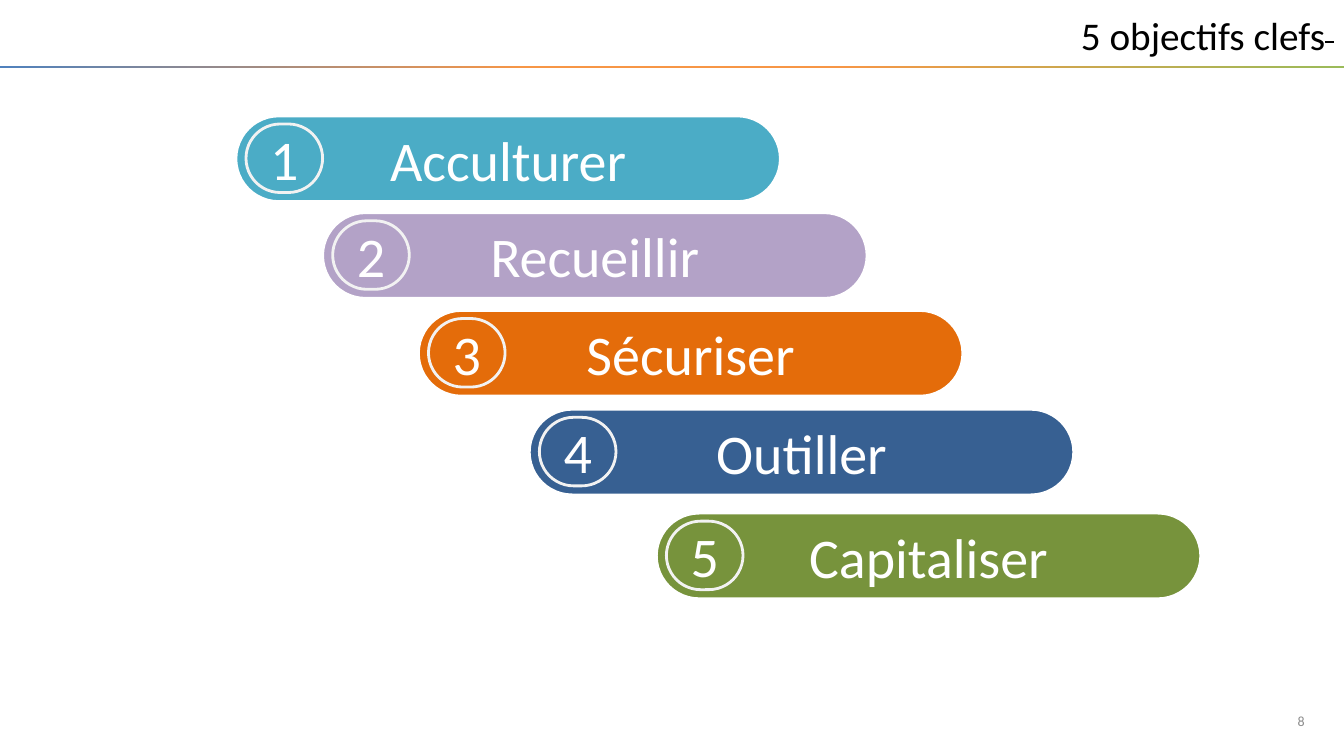
from lxml.etree import SubElement
from pptx import Presentation
from pptx.dml.color import RGBColor
from pptx.enum.shapes import MSO_SHAPE
from pptx.enum.text import MSO_ANCHOR, MSO_AUTO_SIZE, PP_ALIGN
from pptx.oxml.ns import qn
from pptx.util import Inches, Pt

FONT = "Calibri"
COLORS = {
    "black": "000000", "white": "FFFFFF", "ring": "F2F2F2", "gray": "8C8C8C",
    "teal": "4BACC6", "mauve": "B3A2C7", "orange": "E46C0A",
    "navy": "376092", "green": "77933C",
    "blue": "4F81BD", "amber": "F79646", "lime": "9BBB59",
}
GOALS = [
    ("Acculturer", "teal", 2.34, 1.15),
    ("Recueillir", "mauve", 3.2, 2.11),
    ("Sécuriser", "orange", 4.15, 3.08),
    ("Outiller", "navy", 5.25, 4.06),
    ("Capitaliser", "green", 6.51, 5.09),
]


def color(name):
    return RGBColor.from_string(COLORS[name])


def add_run(para, text, size, tint):
    run = para.add_run()
    run.text = text
    run.font.name = FONT
    run.font.size = Pt(size)
    run.font.color.rgb = color(tint)
    return run


def set_frame(frame, align):
    """Centre the text vertically, align it and return its paragraph."""
    frame.word_wrap = True
    frame.auto_size = MSO_AUTO_SIZE.NONE
    frame.vertical_anchor = MSO_ANCHOR.MIDDLE
    para = frame.paragraphs[0]
    para.alignment = align
    return para


def add_title(slide):
    title = slide.shapes.title
    title.left, title.top = Inches(0), Inches(0)
    title.width, title.height = Inches(13.33), Inches(0.69)
    para = set_frame(title.text_frame, PP_ALIGN.RIGHT)
    add_run(para, "5 objectifs clefs", 28, "black")
    space = add_run(para, " ", 28, "black")
    space.font._element.set("strike", "sngStrike")


def add_rule(slide):
    """Draw the thin line under the title, shaded from left to right."""
    rule = slide.shapes.add_shape(MSO_SHAPE.RECTANGLE, Inches(0), Inches(0.65),
                                  Inches(13.33), Inches(0.02))
    rule.shadow.inherit = False
    rule.line.fill.background()
    rule.fill.gradient()
    rule.fill.gradient_angle = 0
    stops = rule._element.spPr.find(qn("a:gradFill")).find(qn("a:gsLst"))
    for stop in list(stops):
        stops.remove(stop)
    for pos, name in ((0, "blue"), (39, "amber"), (62, "amber"), (100, "lime")):
        stop = SubElement(stops, qn("a:gs"), pos=str(pos * 1000))
        SubElement(stop, qn("a:srgbClr"), val=COLORS[name])


def add_pill(slide, text, box, fill, line):
    pill = slide.shapes.add_shape(MSO_SHAPE.ROUNDED_RECTANGLE,
                                  *[Inches(value) for value in box])
    pill.adjustments[0] = 0.5
    pill.shadow.inherit = False
    pill.fill.solid()
    pill.fill.fore_color.rgb = color(fill)
    pill.line.color.rgb = color(line)
    pill.line.width = Pt(2)
    para = set_frame(pill.text_frame, PP_ALIGN.CENTER)
    add_run(para, text, 40, "white")


def add_goal(slide, number, label, fill, left, top):
    """Draw a labelled bar with its numbered badge."""
    add_pill(slide, label, (left, top, 5.4, 0.85), fill, "white")
    badge = (left + 0.1, top + 0.08, 0.76, 0.68)
    add_pill(slide, str(number), badge, fill, "ring")


def add_page(slide, number):
    box = slide.shapes.add_textbox(Inches(12.41), Inches(6.95),
                                   Inches(0.63), Inches(0.4))
    para = set_frame(box.text_frame, PP_ALIGN.RIGHT)
    add_run(para, str(number), 10, "gray")


def main():
    deck = Presentation()
    deck.slide_width, deck.slide_height = Inches(13.33), Inches(7.5)
    slide = deck.slides.add_slide(deck.slide_layouts.get_by_name("Title Only"))
    add_rule(slide)
    add_page(slide, 8)
    add_title(slide)
    for number, goal in enumerate(GOALS, 1):
        add_goal(slide, number, *goal)
    deck.save("out.pptx")


if __name__ == "__main__":
    main()
